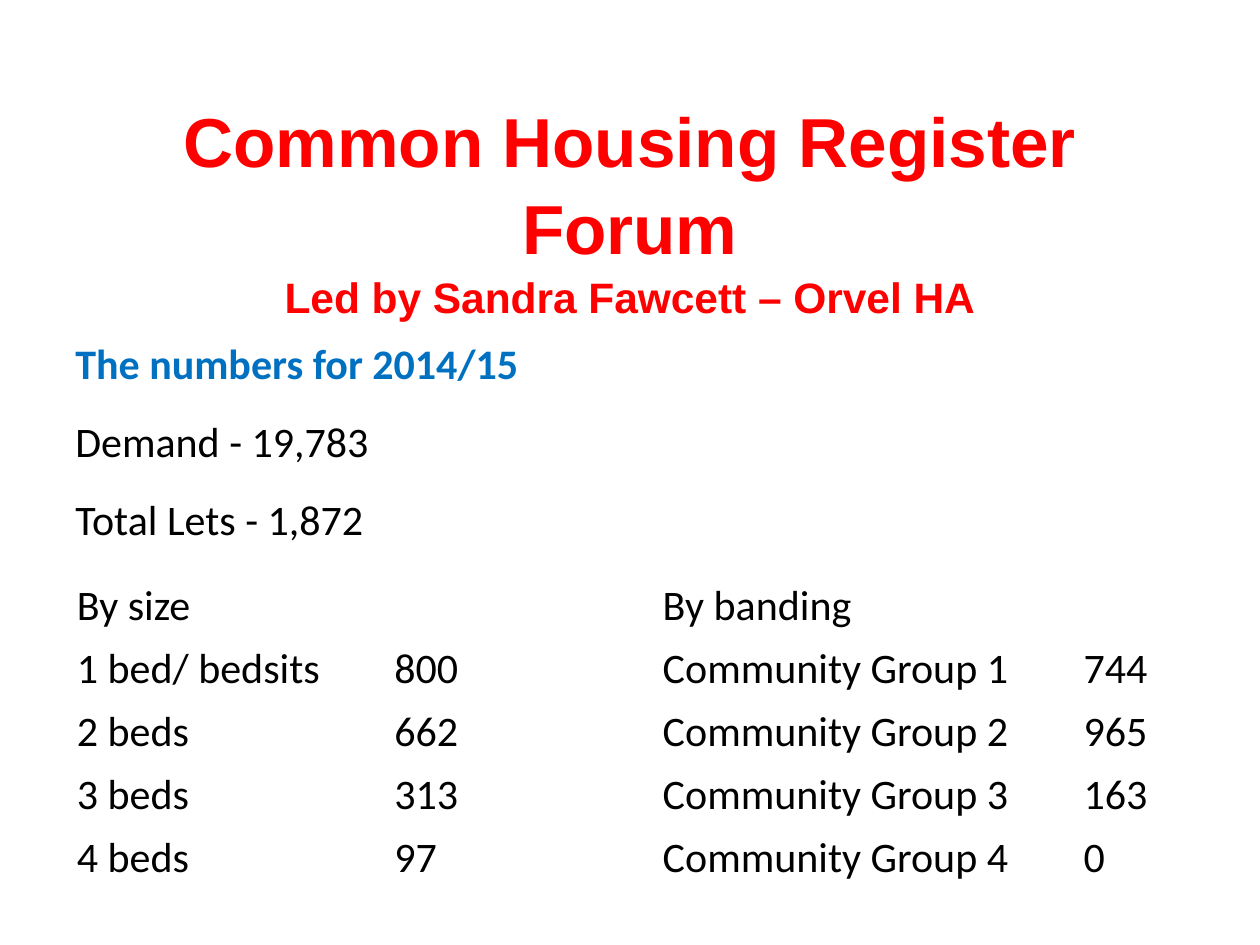
from pptx import Presentation
from pptx.dml.color import RGBColor
from pptx.enum.text import MSO_ANCHOR, PP_ALIGN
from pptx.util import Inches, Pt

deck = Presentation()
deck.slide_width = Inches(10)
deck.slide_height = Inches(7.5)
page = deck.slides.add_slide(deck.slide_layouts[6])
column = deck.slide_width / 100
row = deck.slide_height / 75


def add_span(para, text, size, font, color, bold=False):
    span = para.add_run()
    span.text = text
    span.font.size = Pt(size)
    span.font.name = font
    span.font.bold = bold
    span.font.color.rgb = RGBColor.from_string(color)


def add_box(left, top, width, height, margin_top):
    box = page.shapes.add_textbox(
        int(left * column), int(top * row), int(width * column), int(height * row)
    )
    box.text_frame.word_wrap = True
    box.text_frame.margin_top = int(margin_top * row)
    return box.text_frame


title = add_box(5, 10, 90, 12.5, 1)
title.vertical_anchor = MSO_ANCHOR.MIDDLE
para = title.paragraphs[0]
para.alignment = PP_ALIGN.CENTER
para.line_spacing = 1.05
add_span(para, "Common Housing Register Forum", 39.6, "Arial", "FF0000", True)
para.add_line_break()
add_span(para, "Led by Sandra Fawcett – Orvel HA", 24.3, "Arial", "FF0000", True)

summary = add_box(5, 26.1, 90, 41.3, 0.7)
para = summary.paragraphs[0]
add_span(para, "The numbers for 2014/15", 24, "Calibri", "0070C0", True)
for text in ["Demand - 19,783", "Total Lets - 1,872"]:
    para = summary.add_paragraph()
    para.space_before = Pt(15.6)
    add_span(para, text, 24, "Calibri", "000000")

sizes = [
    ("By size", ""),
    ("1 bed/ bedsits", "800"),
    ("2 beds", "662"),
    ("3 beds", "313"),
    ("4 beds", "97"),
]
bandings = [
    ("By banding", ""),
    ("Community Group 1", "744"),
    ("Community Group 2", "965"),
    ("Community Group 3", "163"),
    ("Community Group 4", "0"),
]
for left, widths, entries in [
    (5.1, (25.2, 17.3), sizes),
    (51.6, (33.4, 9.2), bandings),
]:
    table = page.shapes.add_table(
        len(entries), 2, int(left * column), int(45.6 * row),
        int(sum(widths) * column), int(25 * row),
    ).table
    table.first_row = False
    table.horz_banding = False
    for index, width in enumerate(widths):
        table.columns[index].width = int(width * column)
    for line, entry in enumerate(entries):
        for index, text in enumerate(entry):
            cell = table.cell(line, index)
            cell.fill.background()
            if text:
                add_span(cell.text_frame.paragraphs[0], text, 24, "Calibri", "000000")

deck.save("out.pptx")
